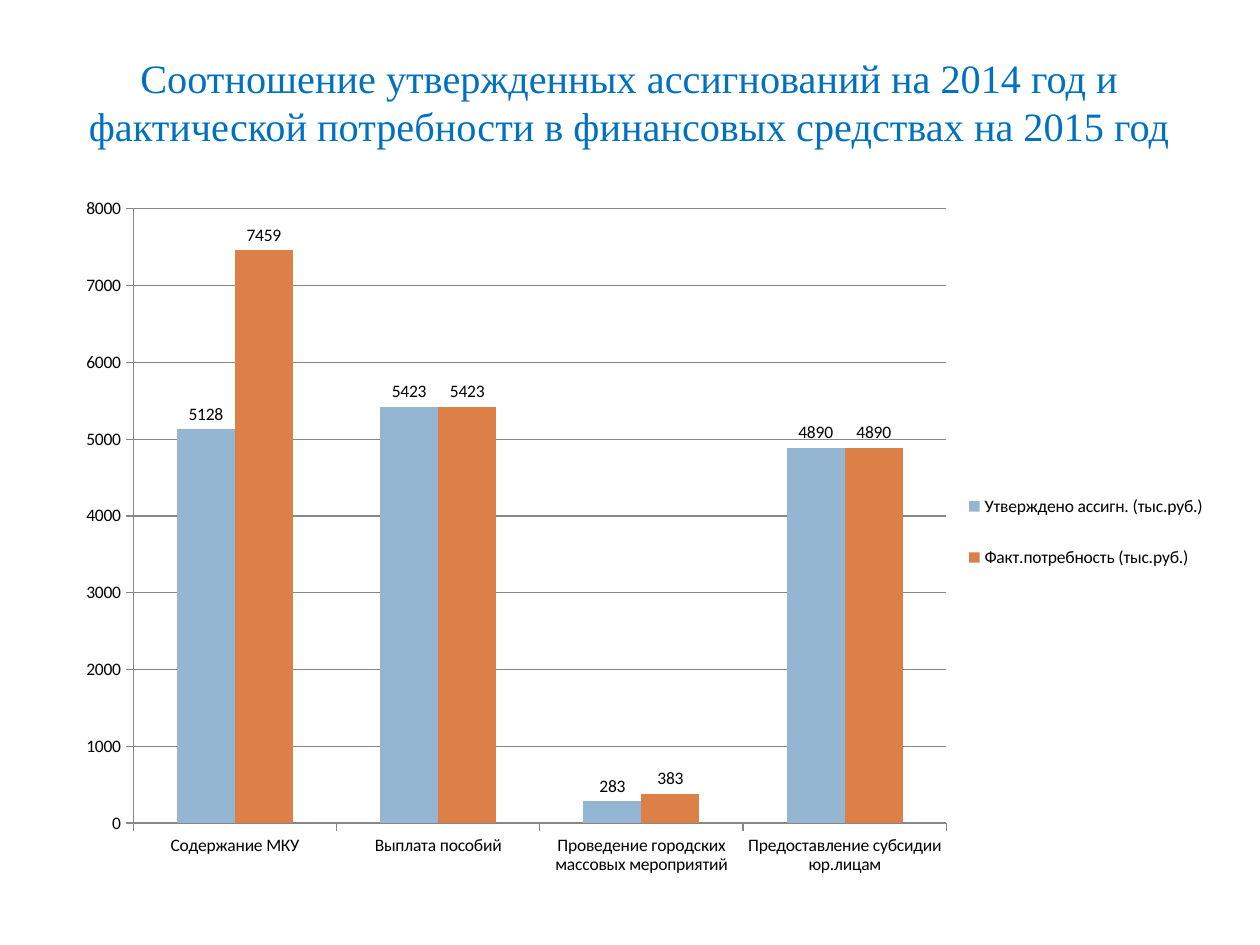
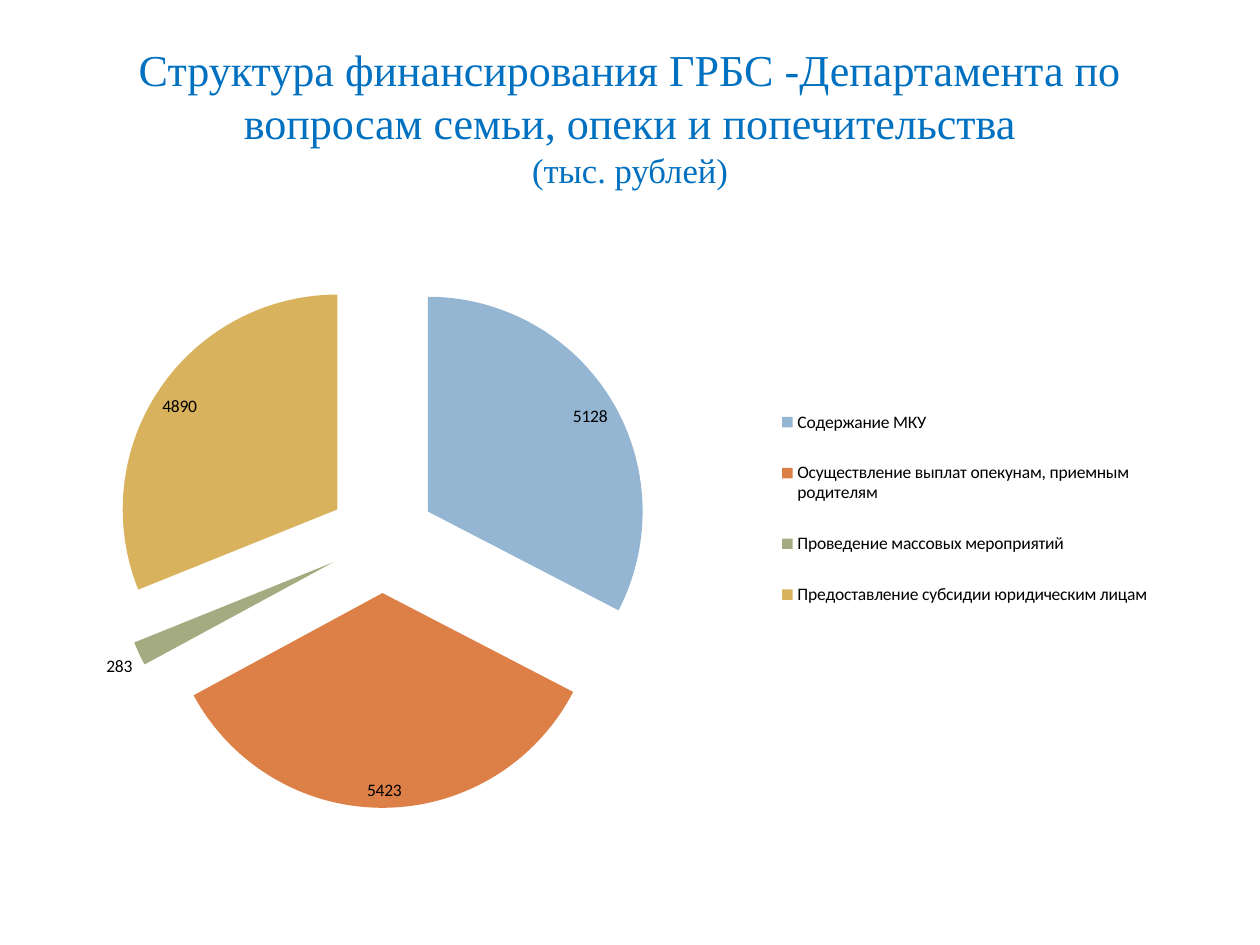
from dataclasses import dataclass

from lxml.etree import SubElement
from pptx import Presentation
from pptx.chart.chart import Chart
from pptx.chart.data import CategoryChartData
from pptx.dml.color import RGBColor
from pptx.enum.chart import XL_CHART_TYPE, XL_LABEL_POSITION, XL_LEGEND_POSITION, XL_TICK_MARK
from pptx.enum.text import MSO_ANCHOR, MSO_AUTO_SIZE, PP_ALIGN
from pptx.oxml import parse_xml
from pptx.oxml.ns import nsdecls, qn
from pptx.oxml.xmlchemy import BaseOxmlElement
from pptx.slide import Slide
from pptx.util import Emu, Pt

PX_PER_INCH = 126
TITLE_COLOR = "0070C0"
AXIS_COLOR = "868686"
TEXT_COLOR = "000000"
BLUE, ORANGE, GREEN, GOLD = "94B6D2", "DD8047", "A5AB81", "D8B25C"
TITLE_FONT, CHART_FONT = "Times New Roman", "Calibri"
APPROVED = (5128, 5423, 283, 4890)
REQUIRED = (7459, 5423, 383, 4890)


@dataclass(frozen=True)
class Box:
    left: int
    top: int
    width: int
    height: int

    def emu(self) -> tuple[Emu, Emu, Emu, Emu]:
        return px(self.left), px(self.top), px(self.width), px(self.height)

    def fractions_of(self, outer: "Box") -> dict[str, float]:
        return {"x": (self.left - outer.left) / outer.width,
                "y": (self.top - outer.top) / outer.height,
                "w": self.width / outer.width,
                "h": self.height / outer.height}


@dataclass(frozen=True)
class TitleLine:
    text: str
    size: float


@dataclass(frozen=True)
class ChartSeries:
    name: str
    values: tuple[int, ...]


def px(length: int) -> Emu:
    return Emu(round(length * 914400 / PX_PER_INCH))


def color(value: str) -> RGBColor:
    return RGBColor.from_string(value)


def add_page(deck: Presentation, box: Box, lines: list[TitleLine]) -> Slide:
    """Add a title-only page whose title lines are parted by line breaks."""
    page = deck.slides.add_slide(deck.slide_layouts[5])
    title = page.shapes.title
    title.left, title.top, title.width, title.height = box.emu()
    frame = title.text_frame
    frame.word_wrap = True
    frame.auto_size = MSO_AUTO_SIZE.NONE
    frame.vertical_anchor = MSO_ANCHOR.MIDDLE
    para = frame.paragraphs[0]
    para.alignment = PP_ALIGN.CENTER
    for index, line in enumerate(lines):
        if index:
            para.add_line_break()
        span = para.add_run()
        span.text = line.text
        span.font.name = TITLE_FONT
        span.font.size = Pt(line.size)
        span.font.color.rgb = color(TITLE_COLOR)
    return page


def manual_layout(**settings: str | float) -> BaseOxmlElement:
    layout = parse_xml(f'<c:layout {nsdecls("c")}><c:manualLayout/></c:layout>')
    for name, value in settings.items():
        SubElement(layout[0], qn(f"c:{name}")).set("val", str(value))
    return layout


def place_legend(chart: Chart, chart_box: Box, legend_box: Box) -> None:
    legend = chart.legend._element
    for old_layout in legend.findall(qn("c:layout")):
        legend.remove(old_layout)
    legend.find(qn("c:legendPos")).addnext(
        manual_layout(xMode="edge", yMode="edge", **legend_box.fractions_of(chart_box)))


def place_plot(chart: Chart, chart_box: Box, plot_box: Box) -> None:
    plot_area = chart._chartSpace.find(f'{qn("c:chart")}/{qn("c:plotArea")}')
    for old_layout in plot_area.findall(qn("c:layout")):
        plot_area.remove(old_layout)
    plot_area.insert(0, manual_layout(layoutTarget="inner", xMode="edge", yMode="edge",
                                      **plot_box.fractions_of(chart_box)))


def add_chart(page: Slide, kind: XL_CHART_TYPE, box: Box, legend_box: Box,
              categories: list[str], all_series: list[ChartSeries],
              label_position: XL_LABEL_POSITION) -> Chart:
    data = CategoryChartData(number_format="General")
    data.categories = categories
    for entry in all_series:
        data.add_series(entry.name, entry.values)
    chart = page.shapes.add_chart(kind, *box.emu(), data).chart
    chart.has_title = False
    chart.font.name = CHART_FONT
    chart.font.size = Pt(10)
    chart.font.color.rgb = color(TEXT_COLOR)
    chart.has_legend = True
    chart.legend.position = XL_LEGEND_POSITION.RIGHT
    chart.legend.include_in_layout = False
    place_legend(chart, box, legend_box)
    for series in chart.plots[0].series:
        series.data_labels.show_value = True
        series.data_labels.position = label_position
    return chart


def style_columns(chart: Chart, fills: list[str]) -> None:
    plot = chart.plots[0]
    plot.vary_by_categories = False
    plot.gap_width = 150
    plot.overlap = 0
    for series, fill in zip(plot.series, fills):
        series.format.fill.solid()
        series.format.fill.fore_color.rgb = color(fill)
    value_axis = chart.value_axis
    value_axis.minimum_scale, value_axis.maximum_scale = 0, 8000
    value_axis.major_unit = 1000
    value_axis.has_major_gridlines = True
    for axis in (chart.category_axis, value_axis):
        axis.major_tick_mark = XL_TICK_MARK.OUTSIDE
        axis.minor_tick_mark = XL_TICK_MARK.NONE
    for part in (chart.category_axis, value_axis, value_axis.major_gridlines):
        part.format.line.color.rgb = color(AXIS_COLOR)
        part.format.line.width = Pt(0.75)


def style_pie(chart: Chart, fills: list[str], explosion: int) -> None:
    plot = chart.plots[0]
    plot.vary_by_categories = True
    series = plot.series[0]
    for index, fill in enumerate(fills):
        point_fill = series.points[index].format.fill
        point_fill.solid()
        point_fill.fore_color.rgb = color(fill)
    first_point = series._element.find(qn("c:dPt"))
    first_point.addprevious(parse_xml(f'<c:explosion {nsdecls("c")} val="{explosion}"/>'))


def add_needs_page(deck: Presentation) -> None:
    page = add_page(deck, Box(63, 38, 1134, 127), [
        TitleLine("Соотношение утвержденных ассигнований на 2014 год и "
                  "фактической потребности в финансовых средствах на 2015 год", 23),
    ])
    chart = add_chart(
        page, XL_CHART_TYPE.COLUMN_CLUSTERED,
        Box(63, 185, 1162, 704), Box(958, 465, 256, 134),
        ["Содержание МКУ", "Выплата пособий", "Проведение городских массовых мероприятий",
         "Предоставление субсидии юр.лицам"],
        [ChartSeries("Утверждено ассигн. (тыс.руб.)", APPROVED),
         ChartSeries("Факт.потребность (тыс.руб.)", REQUIRED)],
        XL_LABEL_POSITION.OUTSIDE_END)
    style_columns(chart, [BLUE, ORANGE])


def add_structure_page(deck: Presentation) -> None:
    page = add_page(deck, Box(63, 38, 1134, 157), [
        TitleLine("Структура финансирования ГРБС -Департамента по "
                  "вопросам семьи, опеки и попечительства", 25.2),
        TitleLine("(тыс. рублей)", 19.8),
    ])
    chart_box = Box(63, 220, 1134, 669)
    chart = add_chart(
        page, XL_CHART_TYPE.PIE, chart_box, Box(766, 381, 397, 255),
        ["Содержание МКУ", "Осуществление выплат опекунам, приемным родителям",
         "Проведение массовых мероприятий", "Предоставление субсидии юридическим лицам"],
        [ChartSeries("Тыс. рублей", APPROVED)], XL_LABEL_POSITION.BEST_FIT)
    style_pie(chart, [BLUE, ORANGE, GREEN, GOLD], explosion=25)
    place_plot(chart, chart_box, Box(79, 271, 606, 537))


def main() -> None:
    deck = Presentation()
    deck.slide_width, deck.slide_height = px(1260), px(945)
    add_needs_page(deck)
    add_structure_page(deck)
    deck.save("out.pptx")


if __name__ == "__main__":
    main()
